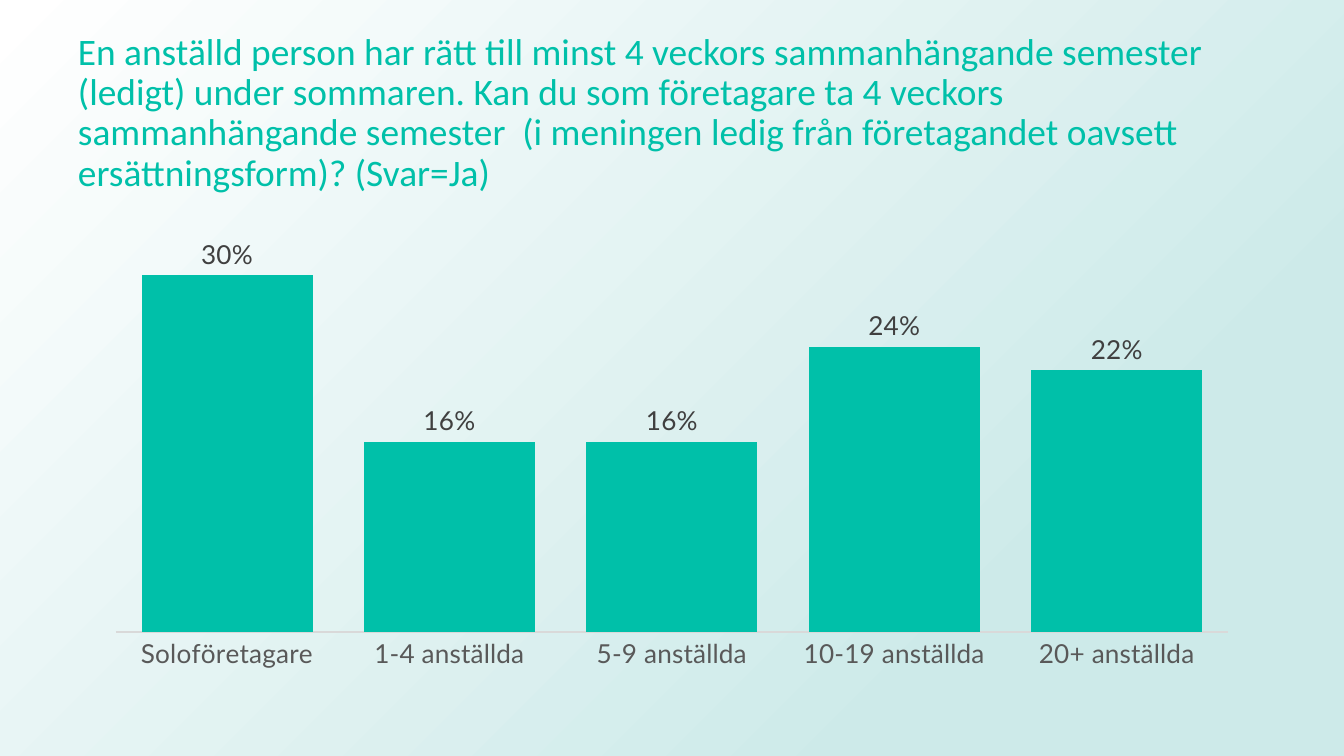
from typing import NamedTuple

from pptx import Presentation
from pptx.chart.data import CategoryChartData
from pptx.dml.color import RGBColor
from pptx.enum.chart import XL_CHART_TYPE, XL_LABEL_POSITION, XL_TICK_MARK
from pptx.enum.shapes import MSO_SHAPE
from pptx.enum.text import MSO_ANCHOR, MSO_AUTO_SIZE, PP_ALIGN
from pptx.oxml import parse_xml
from pptx.oxml.ns import nsdecls
from pptx.util import Inches, Pt

SLIDE_WIDTH = Inches(10)
SLIDE_HEIGHT = Inches(10 * 9 / 16)
COLORS = {
    "teal": "00C0A9",
    "mist": "CDEAE9",
    "white": "FFFFFF",
    "black": "000000",
    "value": "404040",
    "category": "595959",
    "axis": "D9D9D9",
}
TITLE = (
    "En anställd person har rätt till minst 4 veckors sammanhängande semester "
    "(ledigt) under sommaren. Kan du som företagare ta 4 veckors sammanhängande "
    "semester  (i meningen ledig från företagandet oavsett ersättningsform)? "
    "(Svar=Ja)"
)


class Answer(NamedTuple):
    company_size: str
    yes_share: float


ANSWERS = [
    Answer("Soloföretagare", 0.30),
    Answer("1-4 anställda", 0.16),
    Answer("5-9 anställda", 0.16),
    Answer("10-19 anställda", 0.24),
    Answer("20+ anställda", 0.22),
]


def rgb(name: str) -> RGBColor:
    return RGBColor.from_string(COLORS[name])


def set_attributes(target, values: dict) -> None:
    for name, value in values.items():
        setattr(target, name, value)


def format_font(font, name: str, size: float, color: str) -> None:
    set_attributes(font, {"name": name, "size": Pt(size), "bold": False})
    font.color.rgb = rgb(color)


def add_background(slide) -> None:
    """Place a gradient that spreads from the lower right corner behind everything."""
    shape = slide.shapes.add_shape(
        MSO_SHAPE.RECTANGLE, 0, 0, SLIDE_WIDTH, SLIDE_HEIGHT
    )
    shape.shadow.inherit = False
    shape.line.fill.background()
    shape.fill.background()
    stops = "".join(
        f'<a:gs pos="{position}000"><a:srgbClr val="{COLORS[color]}"/></a:gs>'
        for position, color in ((23, "mist"), (100, "white"))
    )
    gradient = parse_xml(
        f'<a:gradFill {nsdecls("a")} rotWithShape="1"><a:gsLst>{stops}</a:gsLst>'
        '<a:path path="circle"><a:fillToRect l="100000" t="100000"/></a:path>'
        '<a:tileRect r="-100000" b="-100000"/></a:gradFill>'
    )
    properties = shape.element.spPr
    properties.replace(properties.find("{*}noFill"), gradient)
    slide.shapes.element.insert(2, shape.element)


def format_title(title) -> None:
    set_attributes(title, {
        "left": Inches(0.48), "top": Inches(0.3),
        "width": Inches(8.83), "height": Inches(1.09),
    })
    frame = title.text_frame
    frame.text = TITLE
    set_attributes(frame, {
        "word_wrap": True,
        "auto_size": MSO_AUTO_SIZE.NONE,
        "vertical_anchor": MSO_ANCHOR.MIDDLE,
    })
    paragraph = frame.paragraphs[0]
    set_attributes(paragraph, {"alignment": PP_ALIGN.LEFT, "line_spacing": 0.9})
    format_font(paragraph.runs[0].font, "Calibri", 20, "teal")


def set_plot_layout(chart, **fractions: float) -> None:
    """Fix the inner plot area, in fractions of the chart's size."""
    plot_area = chart.element.chart.plotArea
    for old_layout in plot_area.findall("{*}layout"):
        plot_area.remove(old_layout)
    sizes = "".join(f'<c:{key} val="{value}"/>' for key, value in fractions.items())
    plot_area.insert(0, parse_xml(
        f'<c:layout {nsdecls("c")}><c:manualLayout><c:layoutTarget val="inner"/>'
        f'<c:xMode val="edge"/><c:yMode val="edge"/>{sizes}'
        "</c:manualLayout></c:layout>"
    ))


def add_answer_chart(slide, answers: list[Answer]) -> None:
    chart_data = CategoryChartData(number_format="0%")
    chart_data.categories = [answer.company_size for answer in answers]
    chart_data.add_series("Series 1", [answer.yes_share for answer in answers])
    chart = slide.shapes.add_chart(
        XL_CHART_TYPE.COLUMN_CLUSTERED,
        Inches(0.69), Inches(1.5), Inches(8.62), Inches(3.56), chart_data,
    ).chart
    set_attributes(chart, {"has_legend": False, "has_title": False})
    format_font(chart.font, "Lato", 14, "black")
    set_plot_layout(chart, x=0.02, y=0.03, w=0.96, h=0.87)

    set_attributes(chart.value_axis, {
        "visible": False, "has_major_gridlines": False,
        "minimum_scale": 0, "maximum_scale": 0.35,
    })
    category_axis = chart.category_axis
    set_attributes(category_axis, {
        "major_tick_mark": XL_TICK_MARK.NONE,
        "minor_tick_mark": XL_TICK_MARK.NONE,
    })
    format_font(category_axis.tick_labels.font, "Lato", 14, "category")
    category_axis.format.line.color.rgb = rgb("axis")
    category_axis.format.line.width = Pt(0.75)

    plot = chart.plots[0]
    set_attributes(plot, {"gap_width": 30, "vary_by_categories": False})
    series = plot.series[0]
    series.format.fill.solid()
    series.format.fill.fore_color.rgb = rgb("teal")
    labels = series.data_labels
    set_attributes(labels, {
        "show_value": True,
        "number_format": "0%",
        "number_format_is_linked": False,
        "position": XL_LABEL_POSITION.OUTSIDE_END,
    })
    format_font(labels.font, "Lato", 14, "value")


def main() -> None:
    presentation = Presentation()
    set_attributes(presentation, {
        "slide_width": SLIDE_WIDTH, "slide_height": SLIDE_HEIGHT,
    })
    slide = presentation.slides.add_slide(presentation.slide_layouts[5])
    add_background(slide)
    format_title(slide.shapes.title)
    add_answer_chart(slide, ANSWERS)
    presentation.save("out.pptx")


if __name__ == "__main__":
    main()
